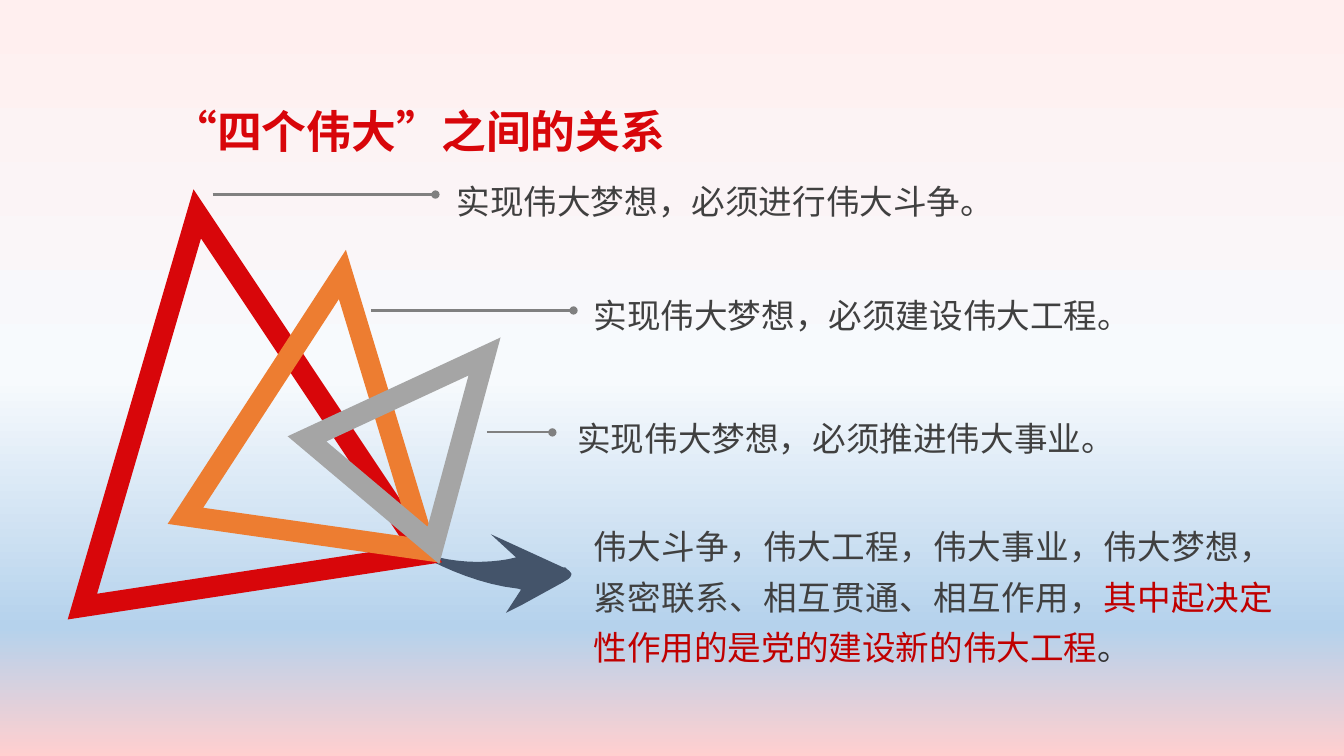
from dataclasses import dataclass

from lxml import etree
from pptx import Presentation
from pptx import util as u
from pptx.dml.color import RGBColor
from pptx.enum import shapes, text
from pptx.oxml.ns import qn

PX = 9144


@dataclass(frozen=True)
class Theme:
    """Colours, type sizes and line widths of the slide."""

    font: str = "Noto Sans CJK SC"
    red: str = "D8060A"
    orange: str = "ED7D31"
    grey: str = "A5A5A5"
    navy: str = "44546A"
    leader: str = "808080"
    body: str = "404040"
    stress: str = "C00000"
    stop: str = "333333"
    title_size: int = 32
    body_size: int = 24
    outline: int = 15
    leader_width: float = 1.5
    sky: tuple = ((0, "FFEFEF"), (50, "F7FAFD"), (83, "B5D2EC"), (100, "FFCFCF"))


THEME = Theme()

TRIANGLES = [
    ((52, 210, 343, 368), -8.7, THEME.red),
    ((201, 271, 241, 259), 8.1, THEME.orange),
    ((342, 333, 164, 176), 40.1, THEME.grey),
]
LEADERS = [(211, 432, 193), (368, 569, 308), (483, 548, 429)]
NOTES = [
    ((443, 165, 545, 56), "实现伟大梦想，必须进行伟大斗争。"),
    ((579, 278, 558, 61), "实现伟大梦想，必须建设伟大工程。"),
    ((563, 400, 596, 61), "实现伟大梦想，必须推进伟大事业。"),
]
SUMMARY = [
    ("伟大斗争，伟大工程，伟大事业，伟大梦想，紧密联系、相互贯通、相互作用，", THEME.body),
    ("其中起决定性作用的是党的建设新的伟大工程", THEME.stress),
    ("。", THEME.stop),
]
ARROW = [
    [(563, 565)],
    [(565, 566), (566, 568), (567, 569)],
    [(567, 571), (566, 573), (563, 575)],
    [(558, 578)], [(518, 600)], [(502, 608)], [(517, 585)], [(514, 584)],
    [(459, 578), (408, 546), (401, 541)],
    [(436, 558), (473, 560), (503, 555)],
    [(512, 553)], [(487, 530)], [(559, 563)], [(561, 563)],
]


def emu(lengths):
    """Turn px lengths into EMU."""
    return [u.Emu(round(length * PX)) for length in lengths]


def apply(target, **values):
    """Set each named attribute on the target."""
    for name, value in values.items():
        setattr(target, name, value)


def paint_background(page):
    """Fill the page with the vertical gradient."""
    page.background.fill.gradient()
    gradient = page._element.find(".//" + qn("a:gradFill"))
    stops = gradient.find(qn("a:gsLst"))
    for stop in list(stops):
        stops.remove(stop)
    for percent, color in THEME.sky:
        stop = etree.SubElement(stops, qn("a:gs"), pos=str(percent * 1000))
        etree.SubElement(stop, qn("a:srgbClr"), val=color)
    gradient.find(qn("a:lin")).set("ang", "5400000")


def write(box, spans, size, bold=False, spacing=1.0, align=text.PP_ALIGN.LEFT):
    """Write coloured spans as one paragraph in a box."""
    frame = box.text_frame
    apply(frame, word_wrap=True, vertical_anchor=text.MSO_ANCHOR.TOP,
          auto_size=text.MSO_AUTO_SIZE.SHAPE_TO_FIT_TEXT)
    para = frame.paragraphs[0]
    apply(para, alignment=align, line_spacing=spacing)
    for words, color in spans:
        span = para.add_run()
        span.text = words
        apply(span.font, name=THEME.font, size=u.Pt(size), bold=bold)
        span.font.color.rgb = RGBColor.from_string(color)
        properties = span.font._element
        properties.set("lang", "zh-CN")
        etree.SubElement(properties, qn("a:ea"), typeface=THEME.font)


def add_title(page, place, words):
    """Move the title placeholder and fill it."""
    title = page.shapes.title
    apply(title, **dict(zip(("left", "top", "width", "height"), emu(place))))
    write(title, [(words, THEME.red)], THEME.title_size, bold=True)


def add_body(page, place, spans, align=text.PP_ALIGN.LEFT):
    """Add a box of body text."""
    box = page.shapes.add_textbox(*emu(place))
    write(box, spans, THEME.body_size, spacing=1.25, align=align)


def add_triangle(page, place, angle, color):
    """Add a hollow triangle with a thick sharp outline."""
    triangle = page.shapes.add_shape(shapes.MSO_SHAPE.ISOSCELES_TRIANGLE, *emu(place))
    triangle.rotation = angle
    triangle.shadow.inherit = False
    triangle.fill.background()
    triangle.line.color.rgb = RGBColor.from_string(color)
    triangle.line.width = u.Pt(THEME.outline)
    etree.SubElement(triangle.line._ln, qn("a:miter"), lim="800000")


def add_leader(page, left, right, y):
    """Add a level line that ends in a dot."""
    leader = page.shapes.add_connector(
        shapes.MSO_CONNECTOR.STRAIGHT, *emu((left, y, right, y)))
    leader.line.color.rgb = RGBColor.from_string(THEME.leader)
    leader.line.width = u.Pt(THEME.leader_width)
    etree.SubElement(leader.line._ln, qn("a:tailEnd"), type="oval")
    etree.SubElement(leader._element.spPr, qn("a:effectLst"))


def curve(start, first, second, end, steps=12):
    """Return points along a cubic curve, without its start."""
    points = []
    for step in range(1, steps + 1):
        t = step / steps
        weights = ((1 - t) ** 3, 3 * t * (1 - t) ** 2, 3 * t * t * (1 - t), t ** 3)
        corners = (start, first, second, end)
        points.append(tuple(sum(w * corner[axis] for w, corner in zip(weights, corners))
                            for axis in (0, 1)))
    return points


def add_arrow(page, segments):
    """Add the curved arrow from straight and cubic segments."""
    points = list(segments[0])
    for segment in segments[1:]:
        points += curve(points[-1], *segment) if len(segment) == 3 else segment
    start, *rest = [emu(point) for point in points]
    builder = page.shapes.build_freeform(*start)
    builder.add_line_segments(rest, close=True)
    arrow = builder.convert_to_shape()
    arrow.shadow.inherit = False
    arrow.fill.solid()
    arrow.fill.fore_color.rgb = RGBColor.from_string(THEME.navy)
    arrow.line.fill.background()


def main():
    """Build the slide and save it."""
    deck = Presentation()
    deck.slide_width, deck.slide_height = u.Emu(12192000), u.Emu(6858000)
    page = deck.slides.add_slide(deck.slide_layouts.get_by_name("Title Only"))
    paint_background(page)
    add_title(page, (161, 98, 525, 64), "“四个伟大”之间的关系")
    add_arrow(page, ARROW)
    for triangle in TRIANGLES:
        add_triangle(page, *triangle)
    for leader in LEADERS:
        add_leader(page, *leader)
    for place, words in NOTES:
        add_body(page, place, [(words, THEME.body)])
    add_body(page, (579, 507, 694, 162), SUMMARY, text.PP_ALIGN.JUSTIFY)
    deck.save("out.pptx")


if __name__ == "__main__":
    main()
